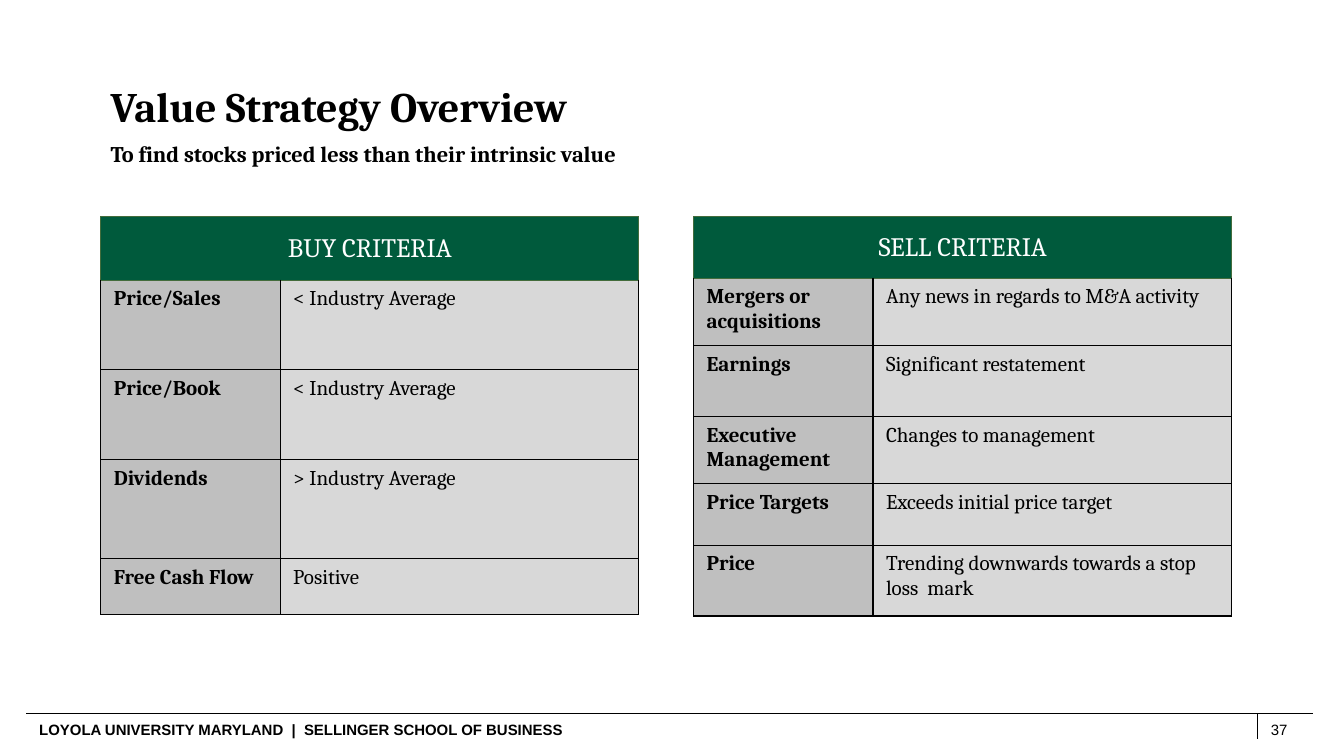
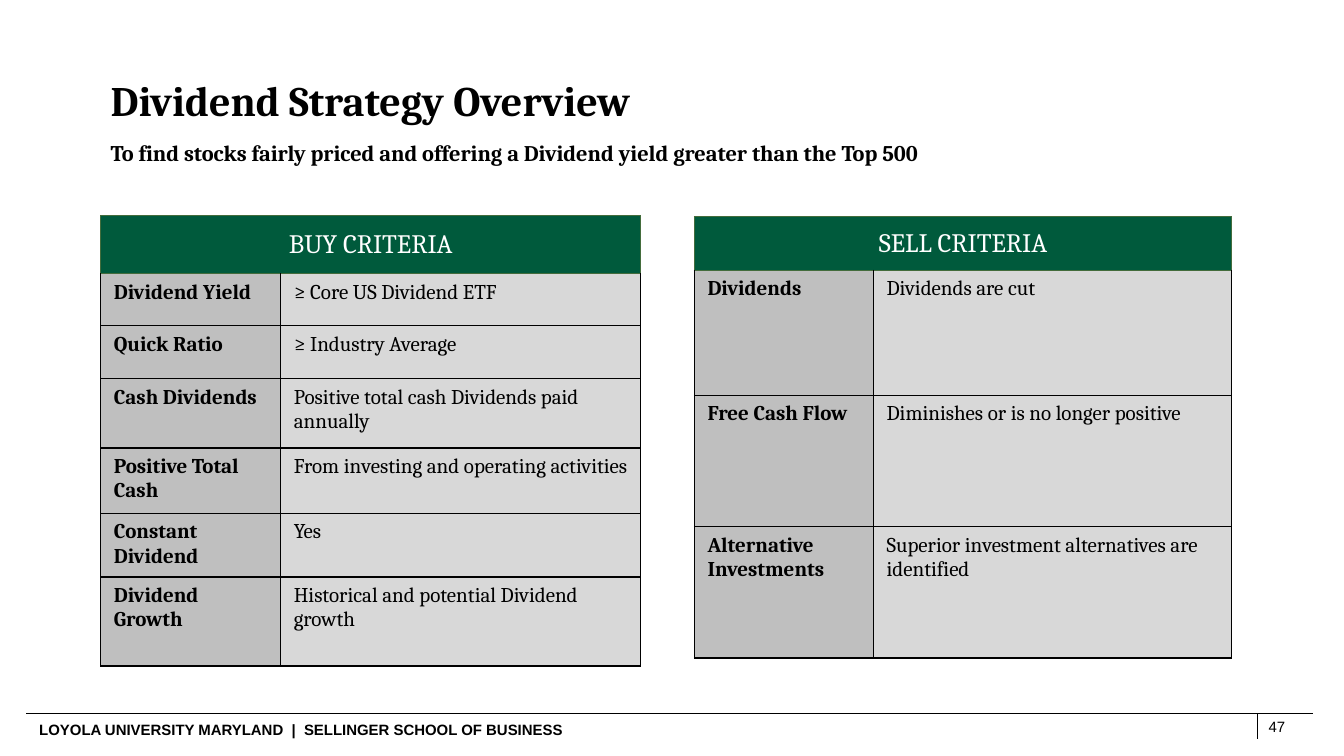
from lxml.etree import SubElement
from pptx import Presentation
from pptx.dml.color import RGBColor
from pptx.enum.shapes import MSO_CONNECTOR
from pptx.enum.text import MSO_ANCHOR, PP_ALIGN
from pptx.oxml.ns import qn
from pptx.util import Cm, Pt

BLACK = RGBColor(0x00, 0x00, 0x00)
WHITE = RGBColor(0xFF, 0xFF, 0xFF)
GREEN = RGBColor(0x00, 0x5A, 0x3C)
EDGE_GREEN = RGBColor(0x43, 0x6C, 0x3C)
MID_GREY = RGBColor(0xBF, 0xBF, 0xBF)
LIGHT_GREY = RGBColor(0xD8, 0xD8, 0xD8)

FOOTER = "LOYOLA UNIVERSITY MARYLAND  |  SELLINGER SCHOOL OF BUSINESS"
FOOTER_RULES = [(0.66, 17.98, 33.1, 17.98), (31.7, 17.98, 31.7, 18.62)]

STRATEGIES = [
    {
        "title": "Value Strategy Overview",
        "title_spacing": 1.0,
        "goal": "To find stocks priced less than their intrinsic value",
        "goal_top": 3.4,
        "page": "37",
        "page_at": (31.78, 18.03),
        "criteria": [
            ("BUY CRITERIA", 2.54, 5.46, 13.56, 1.6, [
                ("Price/Sales", "< Industry Average", 2.26),
                ("Price/Book", "< Industry Average", 2.26),
                ("Dividends", "> Industry Average", 2.49),
                ("Free Cash Flow", "Positive", 1.42),
            ]),
            ("SELL CRITERIA", 17.48, 5.46, 13.56, 1.55, [
                ("Mergers or acquisitions", "Any news in regards to M&A activity", 1.7),
                ("Earnings", "Significant restatement", 1.78),
                ("Executive Management", "Changes to management", 1.7),
                ("Price Targets", "Exceeds initial price target", 1.55),
                ("Price", "Trending downwards towards a stop loss  mark", 1.78),
            ]),
        ],
    },
    {
        "title": "Dividend Strategy Overview",
        "title_spacing": 0.9,
        "goal": "To find stocks fairly priced and offering a Dividend yield "
                "greater than the Top 500",
        "goal_top": 3.38,
        "page": "47",
        "page_at": (31.72, 17.96),
        "criteria": [
            ("BUY CRITERIA", 2.54, 5.44, 13.61, 1.45, [
                ("Dividend Yield", "≥ Core US Dividend ETF", 1.32),
                ("Quick Ratio", "≥ Industry Average", 1.33),
                ("Cash Dividends", "Positive total cash Dividends paid annually", 1.75),
                ("Positive Total Cash", "From investing and operating activities", 1.64),
                ("Constant Dividend", "Yes", 1.61),
                ("Dividend Growth", "Historical and potential Dividend growth", 2.24),
            ]),
            ("SELL CRITERIA", 17.5, 5.46, 13.54, 1.35, [
                ("Dividends", "Dividends are cut", 3.15),
                ("Free Cash Flow", "Diminishes or is no longer positive", 3.31),
                ("Alternative Investments",
                 "Superior investment alternatives are identified", 3.31),
            ]),
        ],
    },
]


def write(frame, text, size, font="Cambria", color=BLACK, bold=False,
          align=PP_ALIGN.LEFT, spacing=1.0):
    frame.word_wrap = True
    paragraph = frame.paragraphs[0]
    paragraph.alignment = align
    paragraph.line_spacing = spacing
    run = paragraph.add_run()
    run.text = text
    run.font.name = font
    run.font.size = Pt(size)
    run.font.bold = bold
    run.font.color.rgb = color


def dress(cell, fill, edges):
    properties = cell._tc.get_or_add_tcPr()
    for side, color in zip("LRTB", edges):
        edge = SubElement(properties, qn(f"a:ln{side}"), w=str(Pt(1)))
        solid = SubElement(edge, qn("a:solidFill"))
        SubElement(solid, qn("a:srgbClr"), val=str(color))
    cell.fill.solid()
    cell.fill.fore_color.rgb = fill
    cell.margin_left = cell.margin_right = Cm(0.33)
    cell.margin_top = cell.margin_bottom = Cm(0.17)


deck = Presentation()
deck.slide_width = Cm(33.87)
deck.slide_height = Cm(19.05)

for strategy in STRATEGIES:
    slide = deck.slides.add_slide(deck.slide_layouts[6])

    for x1, y1, x2, y2 in FOOTER_RULES:
        rule = slide.shapes.add_connector(
            MSO_CONNECTOR.STRAIGHT, Cm(x1), Cm(y1), Cm(x2), Cm(y2))
        rule.line.color.rgb = BLACK
        rule.line.width = Pt(0.75)
        SubElement(rule._element.spPr, qn("a:effectLst"))

    page_left, page_top = strategy["page_at"]
    for left, top, width, height, text, style in [
        (0.74, 18.03, 14.5, 0.71, FOOTER, {"size": 10.7, "font": "Arial", "bold": True}),
        (page_left, page_top, 1.42, 0.64, strategy["page"], {"size": 10.7, "font": "Arial"}),
        (2.54, 1.91, 27.66, 2.06, strategy["title"],
         {"size": 30, "bold": True, "spacing": strategy["title_spacing"]}),
        (2.54, strategy["goal_top"], 22.66, 1.14, strategy["goal"], {"size": 16, "bold": True}),
    ]:
        box = slide.shapes.add_textbox(Cm(left), Cm(top), Cm(width), Cm(height))
        write(box.text_frame, text, **style)

    for heading, left, top, width, heading_height, criteria in strategy["criteria"]:
        heights = [heading_height] + [height for _, _, height in criteria]
        table = slide.shapes.add_table(
            len(heights), 2, Cm(left), Cm(top), Cm(width), Cm(sum(heights))).table
        table.horz_banding = False
        table.columns[0].width = Cm(width / 3)
        table.columns[1].width = Cm(width * 2 / 3)
        for row, height in zip(table.rows, heights):
            row.height = Cm(height)

        heading_cell = table.cell(0, 0)
        heading_cell.merge(table.cell(0, 1))
        for cell in table.rows[0].cells:
            dress(cell, GREEN, [EDGE_GREEN] * 4)
        heading_cell.vertical_anchor = MSO_ANCHOR.MIDDLE
        write(heading_cell.text_frame, heading, 19, color=WHITE, align=PP_ALIGN.CENTER)

        for index, (measure, condition, _) in enumerate(criteria, 1):
            top_edge = EDGE_GREEN if index == 1 else BLACK
            for column, (text, fill) in enumerate(
                    [(measure, MID_GREY), (condition, LIGHT_GREY)]):
                cell = table.cell(index, column)
                dress(cell, fill, [BLACK, BLACK, top_edge, BLACK])
                write(cell.text_frame, text, 15, bold=column == 0)

deck.save("out.pptx")
